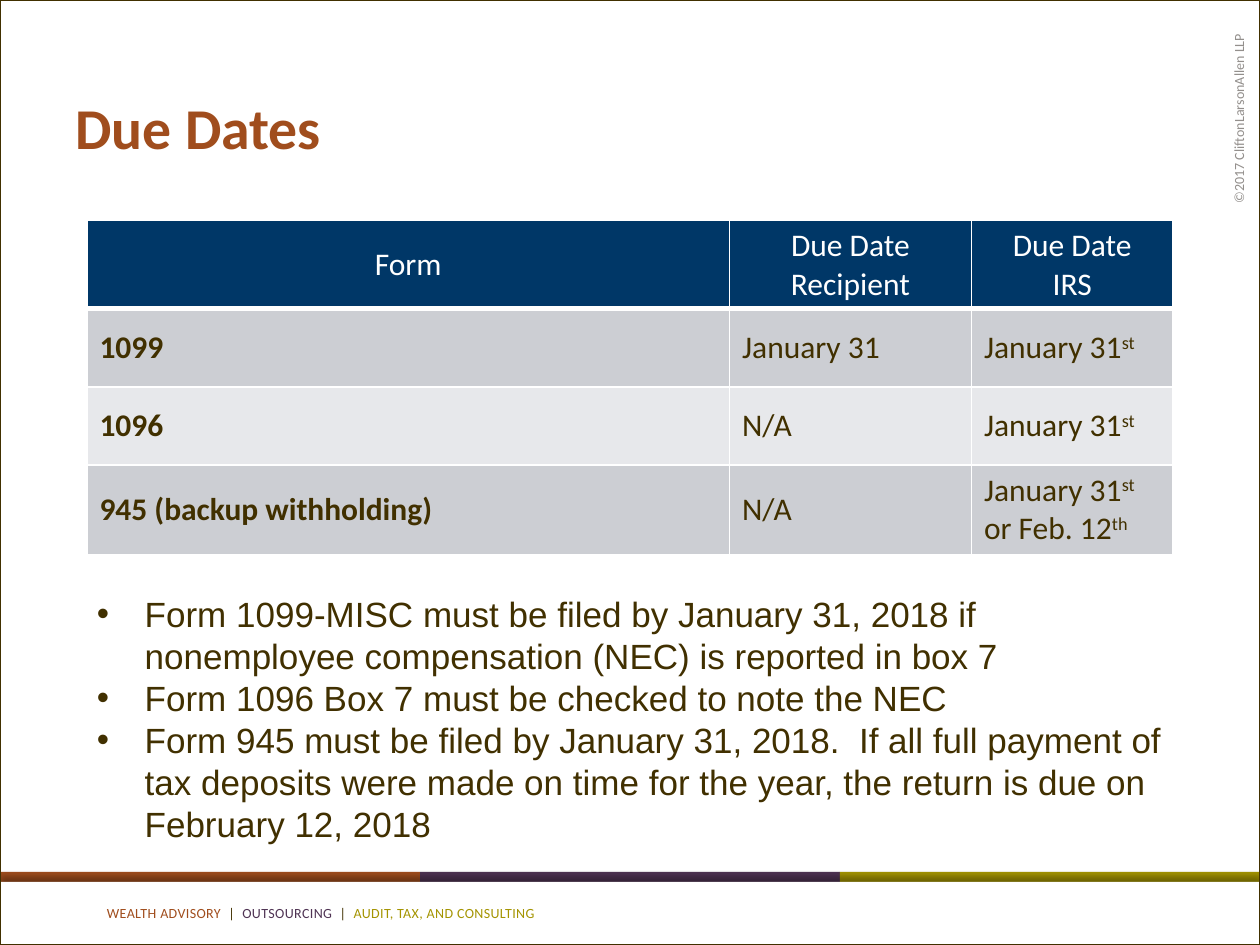
from lxml import etree
from pptx import Presentation
from pptx.dml.color import RGBColor
from pptx.enum.shapes import MSO_SHAPE as Shape
from pptx.enum.text import MSO_ANCHOR as Anchor, MSO_AUTO_SIZE as AutoSize, PP_ALIGN as Align
from pptx.oxml import parse_xml
from pptx.oxml.ns import nsdecls, qn
from pptx.util import Inches, Pt

RUST, PLUM, OLIVE = "A04D1D", "4F3353", "A49400"
BROWN, NAVY, WHITE, GRAY = "413000", "003767", "FFFFFF", "938F8C"
ROW_FILLS = ["CCCED3", "E7E8EB"]
JANUARY = [("January 31", {}), ("st", {"superscript": True})]
HEADERS = [["Form"], ["Due Date", "Recipient"], ["Due Date", "IRS"]]
ROWS = [
    ("1099", "January 31", JANUARY),
    ("1096", "N/A", JANUARY),
    ("945 (backup withholding)", "N/A",
     JANUARY + [(" or Feb. 12", {}), ("th", {"superscript": True})]),
]
NOTES = [
    "Form 1099-MISC must be filed by January 31, 2018 if nonemployee compensation (NEC) is reported in box 7",
    "Form 1096 Box 7 must be checked to note the NEC",
    "Form 945 must be filed by January 31, 2018.  If all full payment of tax deposits were made on time "
    "for the year, the return is due on February 12, 2018",
]


def color(value):
    return RGBColor.from_string(value)


def add_run(paragraph, text, size=18, font="Calibri", fill=BROWN, bold=False,
            superscript=False, spacing=0):
    run = paragraph.add_run()
    run.text = text
    run.font.size = Pt(size)
    run.font.name = font
    run.font.bold = bold
    run.font.color.rgb = color(fill)
    properties = run._r.get_or_add_rPr()
    if superscript:
        properties.set("baseline", "30000")
    if spacing:
        properties.set("spc", str(round(spacing * 100)))


def next_paragraph(frame, index):
    return frame.add_paragraph() if index else frame.paragraphs[0]


def add_text_frame(slide, left, top, width, height):
    shape = slide.shapes.add_textbox(Inches(left), Inches(top), Inches(width), Inches(height))
    shape.text_frame.word_wrap = True
    return shape, shape.text_frame


def add_rectangle(slide, left, top, width, height, fill=None, line=None):
    shape = slide.shapes.add_shape(
        Shape.RECTANGLE, Inches(left), Inches(top), Inches(width), Inches(height))
    shape.shadow.inherit = False
    if fill:
        shape.fill.solid()
        shape.fill.fore_color.rgb = color(fill)
    else:
        shape.fill.background()
    if line:
        shape.line.color.rgb = color(line)
        shape.line.width = Pt(0.75)
    else:
        shape.line.fill.background()
    return shape


def add_upward_shadow(shape):
    effects = shape._element.spPr.find(qn("a:effectLst"))
    effects.append(parse_xml(
        f'<a:outerShdw {nsdecls("a")} blurRad="{Pt(4)}" dist="{Pt(3)}" dir="16200000" rotWithShape="0">'
        '<a:srgbClr val="000000"><a:alpha val="34000"/></a:srgbClr></a:outerShdw>'))


def add_footer(slide, left, top, width, height):
    bar_height = 0.08
    bar_width = width / 3
    for index, fill in enumerate([RUST, PLUM, OLIVE]):
        add_rectangle(slide, left + index * bar_width, top, bar_width, bar_height, fill)
    panel = add_rectangle(slide, left, top + bar_height, width, height - bar_height, WHITE)
    add_upward_shadow(panel)
    frame = add_text_frame(slide, left + 0.75, top + 0.21, 4.08, 0.24)[1]
    services = [("WEALTH ADVISORY  ", RUST), ("|  ", BROWN), ("OUTSOURCING  ", PLUM),
                ("|  ", BROWN), ("AUDIT, TAX, AND CONSULTING", OLIVE)]
    for text, fill in services:
        add_run(frame.paragraphs[0], text, size=8, fill=fill, spacing=0.2)


def add_copyright(slide, left, top, width, height):
    shape, frame = add_text_frame(slide, left, top, width, height)
    shape.rotation = 270
    frame.vertical_anchor = Anchor.MIDDLE
    frame.paragraphs[0].alignment = Align.RIGHT
    add_run(frame.paragraphs[0], "©2017 CliftonLarsonAllen LLP", size=8, fill=GRAY)


def place_title(slide, left, top, width, height):
    title = slide.shapes.title
    title.left, title.top = Inches(left), Inches(top)
    title.width, title.height = Inches(width), Inches(height)
    frame = title.text_frame
    frame.auto_size = AutoSize.NONE
    frame.vertical_anchor = Anchor.MIDDLE
    frame.paragraphs[0].alignment = Align.LEFT
    add_run(frame.paragraphs[0], "Due Dates", size=33, fill=RUST, bold=True)


def format_cell(cell, fill, bottom_width=1):
    properties = cell._tc.get_or_add_tcPr()
    for side, width in [("L", 1), ("R", 1), ("T", 1), ("B", bottom_width)]:
        border = etree.SubElement(properties, qn(f"a:ln{side}"), w=str(Pt(width)))
        solid = etree.SubElement(border, qn("a:solidFill"))
        etree.SubElement(solid, qn("a:srgbClr"), val=WHITE)
    cell.fill.solid()
    cell.fill.fore_color.rgb = color(fill)
    cell.vertical_anchor = Anchor.MIDDLE


def add_due_dates(slide, left, top, width, height):
    table = slide.shapes.add_table(
        len(ROWS) + 1, len(HEADERS), Inches(left), Inches(top), Inches(width), Inches(height)).table
    for column, column_width in zip(table.columns, [5.1, 1.92, 1.6]):
        column.width = Inches(column_width)
    for row, row_height in zip(table.rows, [0.7, 0.62, 0.62, 0.71]):
        row.height = Inches(row_height)
    for column_index, lines in enumerate(HEADERS):
        cell = table.cell(0, column_index)
        format_cell(cell, NAVY, bottom_width=3)
        for index, line in enumerate(lines):
            paragraph = next_paragraph(cell.text_frame, index)
            paragraph.alignment = Align.CENTER
            add_run(paragraph, line, fill=WHITE)
    for row_index, (form, recipient, agency) in enumerate(ROWS):
        contents = [[(form, {"bold": True})], [(recipient, {})], agency]
        for column_index, runs in enumerate(contents):
            cell = table.cell(row_index + 1, column_index)
            format_cell(cell, ROW_FILLS[row_index % 2])
            for text, style in runs:
                add_run(cell.text_frame.paragraphs[0], text, **style)


def add_notes(slide, left, top, width, height):
    frame = add_text_frame(slide, left, top, width, height)[1]
    for index, note in enumerate(NOTES):
        paragraph = next_paragraph(frame, index)
        properties = paragraph._p.get_or_add_pPr()
        properties.set("marL", str(Inches(0.38)))
        properties.set("indent", str(Inches(-0.38)))
        etree.SubElement(properties, qn("a:buFont"), typeface="Arial")
        etree.SubElement(properties, qn("a:buChar"), char="•")
        add_run(paragraph, note, size=20, font="Arial")


def main():
    presentation = Presentation()
    presentation.slide_width, presentation.slide_height = Inches(10), Inches(7.5)
    slide = presentation.slides.add_slide(presentation.slide_layouts[5])
    add_footer(slide, 0, 6.92, 10, 0.58)
    add_rectangle(slide, 0, 0, 10, 7.5, line=BROWN)
    add_copyright(slide, 8.54, 1.29, 2.58, 0.34)
    place_title(slide, 0.5, 0.5, 9, 1)
    add_due_dates(slide, 0.69, 1.75, 8.62, 2.65)
    add_notes(slide, 0.67, 4.65, 8.83, 2.12)
    presentation.save("out.pptx")


if __name__ == "__main__":
    main()
